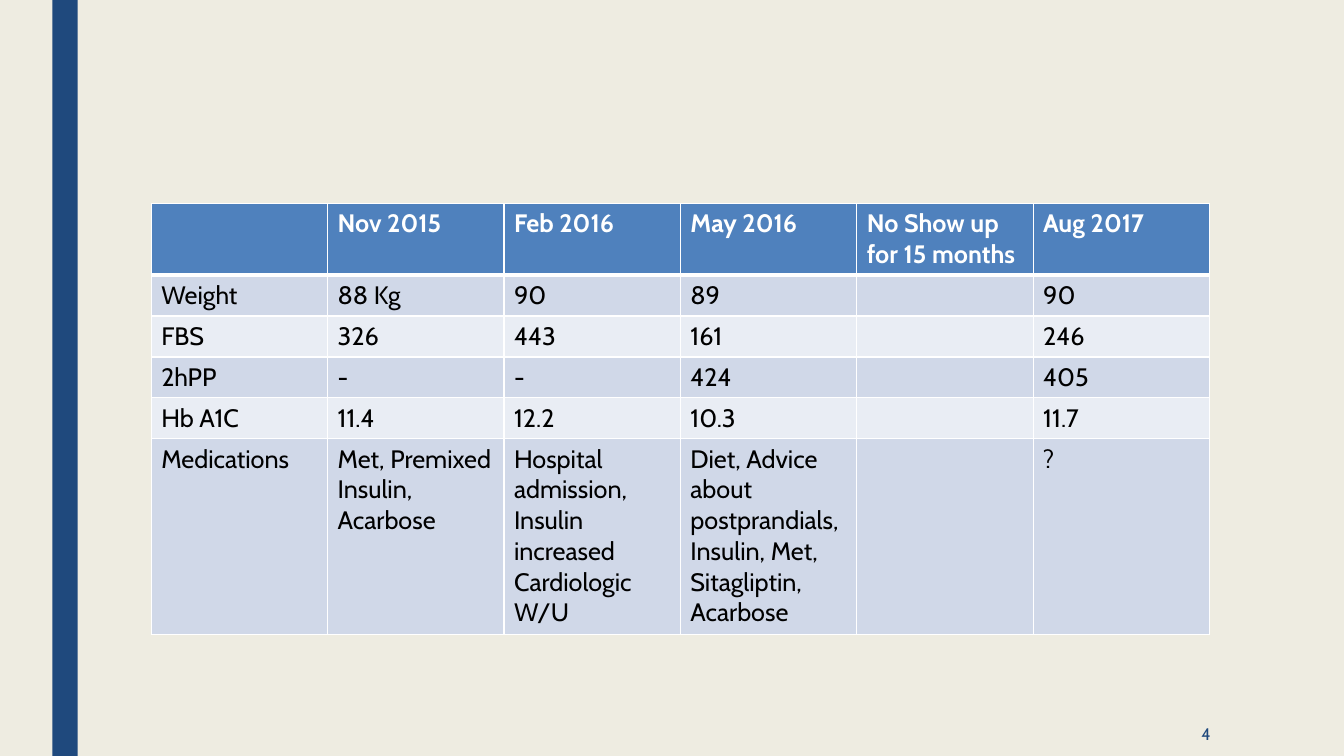
from lxml.etree import SubElement
from pptx import Presentation
from pptx.dml.color import RGBColor
from pptx.enum.shapes import MSO_SHAPE
from pptx.enum.text import MSO_ANCHOR, PP_ALIGN
from pptx.oxml.ns import qn
from pptx.util import Cm, Pt

COLORS = {
    "background": "EEECE1",
    "navy": "1F497D",
    "header": "4F81BD",
    "odd": "D0D8E8",
    "even": "E9EDF4",
    "white": "FFFFFF",
    "black": "000000",
}
FONT = "Cabin"
VISITS = [
    ["", "Nov 2015", "Feb 2016", "May 2016", "No Show up for 15 months", "Aug 2017"],
    ["Weight", "88 Kg", "90", "89", "", "90"],
    ["FBS", "326", "443", "161", "", "246"],
    ["2hPP", "-", "-", "424", "", "405"],
    ["Hb A1C", "11.4", "12.2", "10.3", "", "11.7"],
    ["Medications", "Met, Premixed Insulin, Acarbose",
     "Hospital admission, Insulin increased\nCardiologic W/U",
     "Diet, Advice about postprandials, Insulin, Met, Sitagliptin, Acarbose", "", "?"],
]
ROW_HEIGHTS = [1.79, 1.03, 1.03, 1.03, 1.03, 4.93]
COLUMN_WIDTH = 4.445


def rgb(name):
    """Return the named colour."""
    return RGBColor.from_string(COLORS[name])


def write(frame, text, size=18, color="black", bold=False, align=PP_ALIGN.LEFT):
    """Fill a text frame, one paragraph per line of text."""
    frame.word_wrap = True
    frame.text = text
    for paragraph in frame.paragraphs:
        paragraph.alignment = align
        font = paragraph.font
        font.name, font.size, font.bold = FONT, Pt(size), bold
        font.color.rgb = rgb(color)
        for run in paragraph.runs:
            run.font.name, run.font.size, run.font.bold = FONT, Pt(size), bold
            run.font.color.rgb = rgb(color)


def set_borders(cell, widths):
    """Draw white cell borders of the given point widths by side."""
    properties = cell._tc.get_or_add_tcPr()
    for side, width in widths.items():
        border = SubElement(properties, qn(f"a:ln{side}"), w=str(Pt(width)))
        fill = SubElement(border, qn("a:solidFill"))
        SubElement(fill, qn("a:srgbClr"), val=COLORS["white"])


def add_side_band(slide):
    """Add the vertical band at the left."""
    band = slide.shapes.add_shape(MSO_SHAPE.RECTANGLE, Cm(1.32), Cm(0), Cm(0.64), Cm(19.05))
    band.shadow.inherit = False
    band.fill.solid()
    band.fill.fore_color.rgb = rgb("navy")
    band.line.fill.background()


def add_visit_table(slide):
    """Add the table of measurements and medications per visit."""
    columns = len(VISITS[0])
    table = slide.shapes.add_table(
        len(VISITS), columns, Cm(3.81), Cm(5.13),
        Cm(COLUMN_WIDTH * columns), Cm(sum(ROW_HEIGHTS))).table
    for column in table.columns:
        column.width = Cm(COLUMN_WIDTH)
    for index, (visit_row, height) in enumerate(zip(VISITS, ROW_HEIGHTS)):
        table.rows[index].height = Cm(height)
        is_header = index == 0
        band = "header" if is_header else ("odd" if index % 2 else "even")
        widths = {"L": 1, "R": 1, "T": 3 if index == 1 else 1, "B": 3 if is_header else 1}
        for cell, text in zip(table.rows[index].cells, visit_row):
            set_borders(cell, widths)
            cell.fill.solid()
            cell.fill.fore_color.rgb = rgb(band)
            write(cell.text_frame, text, bold=is_header,
                  color="white" if is_header else "black")


def add_page_number(slide, number):
    """Add the page number at the bottom right."""
    frame = slide.shapes.add_textbox(Cm(26.31), Cm(17.93), Cm(4.45), Cm(1.12)).text_frame
    frame.vertical_anchor = MSO_ANCHOR.MIDDLE
    write(frame, number, size=12, color="navy", align=PP_ALIGN.RIGHT)


def main():
    """Build and save the slide."""
    deck = Presentation()
    deck.slide_width, deck.slide_height = Cm(33.87), Cm(19.05)
    slide = deck.slides.add_slide(deck.slide_layouts[6])
    slide.background.fill.solid()
    slide.background.fill.fore_color.rgb = rgb("background")
    add_side_band(slide)
    add_visit_table(slide)
    add_page_number(slide, "4")
    deck.save("out.pptx")


if __name__ == "__main__":
    main()
